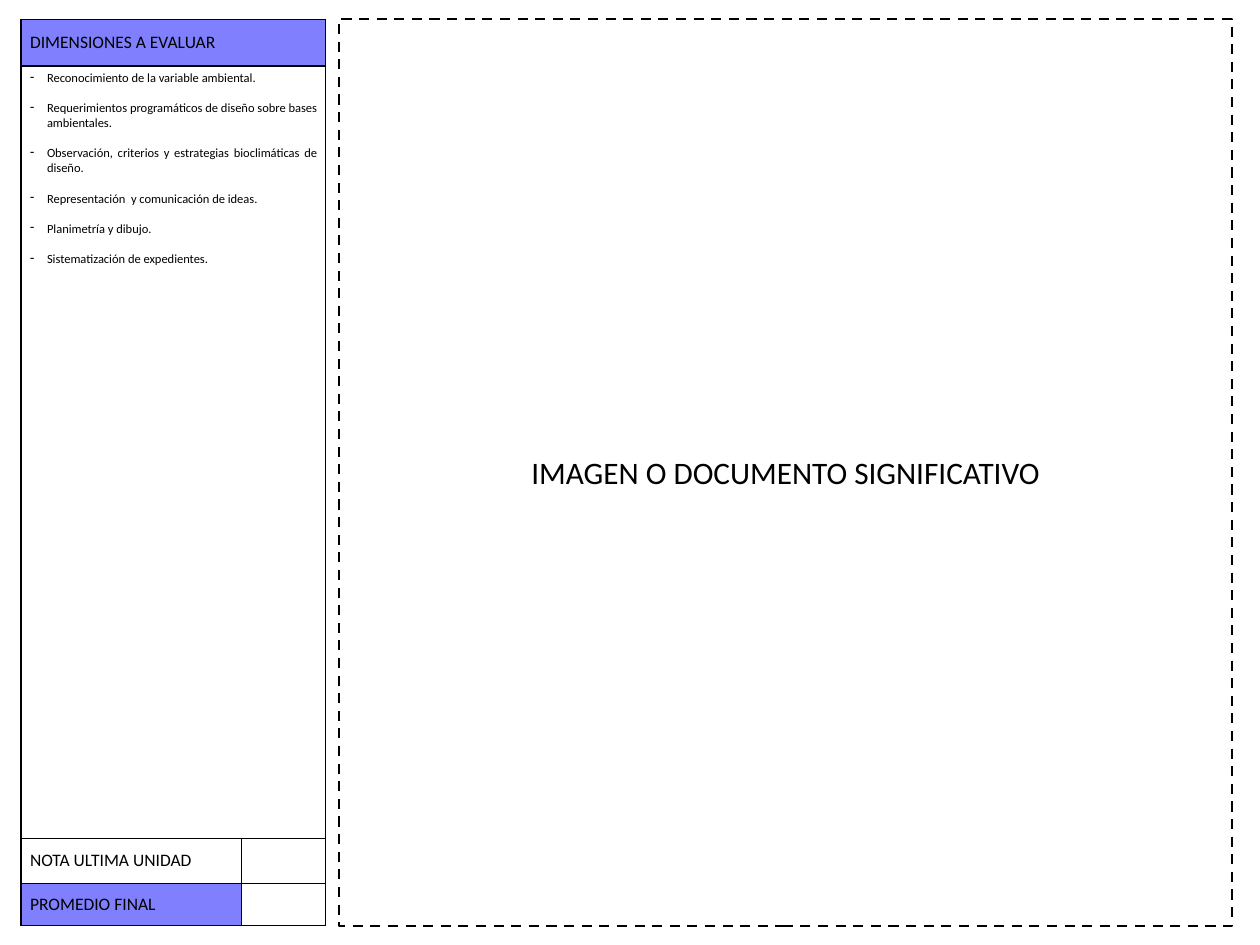
import pptx
import pptx.dml.color
import pptx.enum.dml
import pptx.enum.shapes
import pptx.enum.text
import pptx.oxml
import pptx.oxml.ns
import pptx.util
from lxml import etree

PX = 914400 // 90
BLACK, WHITE, VIOLET = "000000", "FFFFFF", "8080FF"
ALIGN = pptx.enum.text.PP_ALIGN
MIDDLE = pptx.enum.text.MSO_ANCHOR.MIDDLE


def color(value):
    return pptx.dml.color.RGBColor.from_string(value)


def write(paragraph, text, size):
    run = paragraph.add_run()
    run.text = text
    font_format = {"name": "Calibri", "size": pptx.util.Pt(size), "bold": False}
    for key, value in font_format.items():
        setattr(run.font, key, value)
    run.font.color.rgb = color(BLACK)


deck = pptx.Presentation()
deck.slide_width, deck.slide_height = 1260 * PX, 945 * PX
slide = deck.slides.add_slide(deck.slide_layouts[6])

# Area for the significant image or document
document_area = slide.shapes.add_shape(
    pptx.enum.shapes.MSO_SHAPE.RECTANGLE, 339 * PX, 19 * PX, 893 * PX, 907 * PX)
document_area.shadow.inherit = False
document_area.fill.background()
document_area.line.color.rgb = color(BLACK)
document_area.line.width = pptx.util.Pt(2)
document_area.line.dash_style = pptx.enum.dml.MSO_LINE.DASH
document_area.text_frame.vertical_anchor = MIDDLE
caption = document_area.text_frame.paragraphs[0]
caption.alignment = ALIGN.CENTER
write(caption, "IMAGEN O DOCUMENTO SIGNIFICATIVO", 25)

# Evaluation table
column_widths = [220, 85]
row_heights = [47, 773, 44, 43]
evaluation = slide.shapes.add_table(
    4, 2, 21 * PX, 19 * PX, sum(column_widths) * PX, sum(row_heights) * PX).table
evaluation.first_row = evaluation.horz_banding = False
for column, width in zip(evaluation.columns, column_widths):
    column.width = width * PX
for row, height in zip(evaluation.rows, row_heights):
    row.height = height * PX
for row in range(2):
    evaluation.cell(row, 0).merge(evaluation.cell(row, 1))

# Border widths in points, by cell: left, right, top, bottom
borders = [
    [(1, 1, 0.5, 1)] * 2,
    [(1, 1, 1, 1)] * 2,
    [(1, 0.5, 1, 0.5), (0.5, 1, 1, 0.5)],
    [(1, 0.5, 0.5, 1), (0.5, 1, 0.5, 1)],
]
fills = [[VIOLET, VIOLET], [None, None], [WHITE, None], [VIOLET, None]]
for row in range(4):
    for col in range(2):
        cell = evaluation.cell(row, col)
        properties = cell._tc.get_or_add_tcPr()
        for side, points in zip("LRTB", borders[row][col]):
            properties.append(pptx.oxml.parse_xml(
                f'<a:ln{side} {pptx.oxml.ns.nsdecls("a")} w="{pptx.util.Pt(points)}">'
                f'<a:solidFill><a:srgbClr val="{BLACK}"/></a:solidFill></a:ln{side}>'))
        if fills[row][col]:
            cell.fill.solid()
            cell.fill.fore_color.rgb = color(fills[row][col])
        else:
            cell.fill.background()

headings = {0: "DIMENSIONES A EVALUAR", 2: "NOTA ULTIMA UNIDAD", 3: "PROMEDIO FINAL"}
for row, heading in headings.items():
    cell = evaluation.cell(row, 0)
    cell.vertical_anchor = MIDDLE
    write(cell.text_frame.paragraphs[0], heading, 14)

dimensions = [
    "Reconocimiento de la variable ambiental.",
    "Requerimientos programáticos de diseño sobre bases ambientales.",
    "Observación, criterios y estrategias bioclimáticas de diseño.",
    "Representación  y comunicación de ideas.",
    "Planimetría y dibujo.",
    "Sistematización de expedientes.",
]
dimension_list = evaluation.cell(1, 0).text_frame
for index, dimension in enumerate(dimensions):
    item = dimension_list.add_paragraph() if index else dimension_list.paragraphs[0]
    item.alignment = ALIGN.JUSTIFY
    item.space_after = pptx.util.Pt(12)
    write(item, dimension, 10)
    item_properties = item._p.get_or_add_pPr()
    item_properties.set("marL", str(17 * PX))
    item_properties.set("indent", str(-17 * PX))
    bullet = etree.SubElement(item_properties, pptx.oxml.ns.qn("a:buChar"))
    bullet.set("char", "-")

deck.save("out.pptx")
